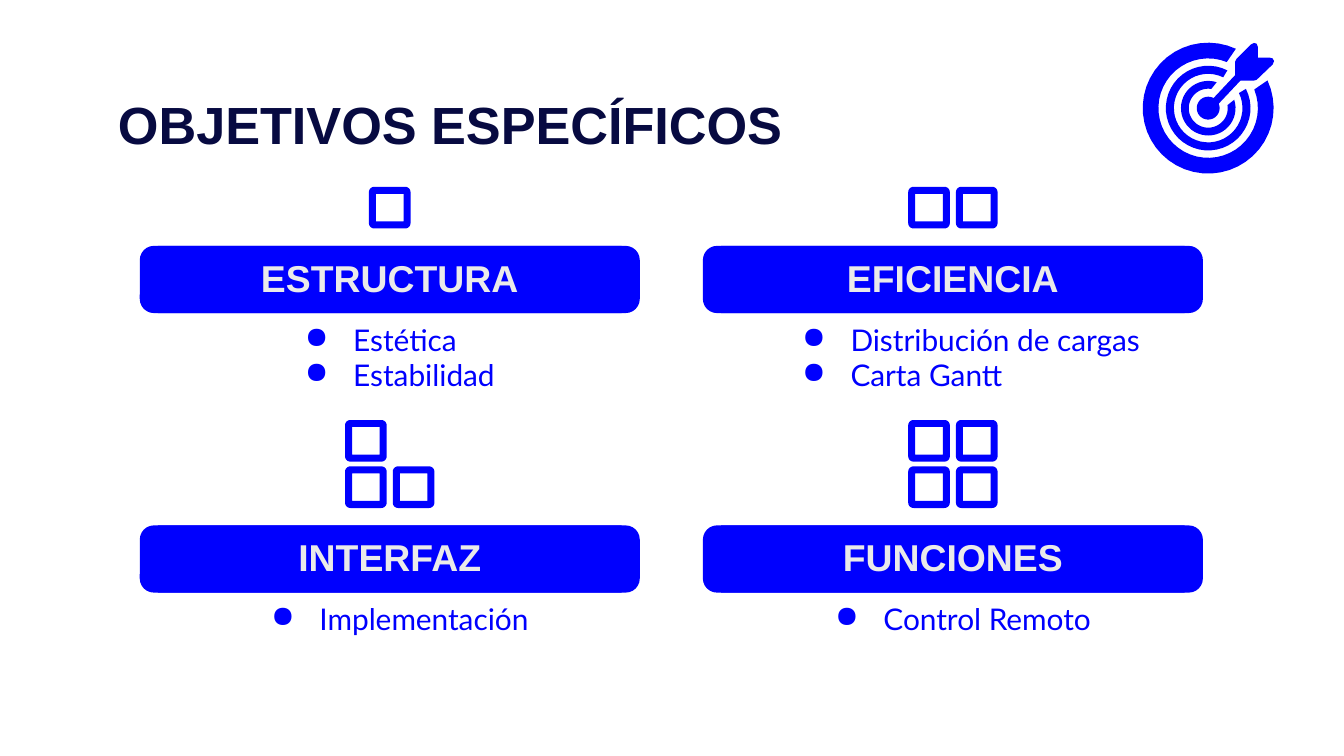
import math
from lxml import etree
from pptx import Presentation
from pptx import util as u
from pptx.dml.color import RGBColor
from pptx.enum import shapes, text
from pptx.oxml import ns

COLORS = {"blue": "0000FE", "navy": "070A41", "pale": "EAEAEA"}
RGB = {name: RGBColor.from_string(value) for name, value in COLORS.items()}

# Grid of 100 columns by 56.25 rows; every length below counts its cells
CELL = u.Inches(0.1)
prs = Presentation()
prs.slide_width = 100 * CELL
prs.slide_height = int(56.25 * CELL)
slide = prs.slides.add_slide(prs.slide_layouts[6])


def arc(x, y, radius, start, end, steps=40):
    """Points along a circle, with angles in degrees counted anticlockwise."""
    angles = [math.radians(start + (end - start) * i / steps) for i in range(steps + 1)]
    return [(x + radius * math.cos(a), y - radius * math.sin(a)) for a in angles]


def draw_outline(*contours):
    """One blue freeform; a second contour cuts a hole."""
    contours = [[(x * CELL, y * CELL) for x, y in points] for points in contours]
    builder = slide.shapes.build_freeform(*contours[0][0], scale=1.0)
    builder.add_line_segments(contours[0][1:], close=True)
    for points in contours[1:]:
        builder.move_to(*points[0])
        builder.add_line_segments(points[1:], close=True)
    outline = builder.convert_to_shape()
    outline.fill.solid()
    outline.fill.fore_color.rgb = RGB["blue"]


# Heading
heading = slide.shapes.add_textbox(*[int(n * CELL) for n in (7.8, 5.9, 84.4, 6.3)])
heading.text_frame.text = "OBJETIVOS ESPECÍFICOS"
heading_font = heading.text_frame.paragraphs[0].runs[0].font
heading_font.name, heading_font.size, heading_font.bold = "Arial", u.Pt(28), True
heading_font.color.rgb = RGB["navy"]

# Four objectives: name, column, row, points, counter squares (column, row above bar),
# then the inset and width of the list, its text indent and its alignment
LEFT, CENTER = text.PP_ALIGN.LEFT, text.PP_ALIGN.CENTER
BAR_WIDTH, BAR_HEIGHT = 37.2, 5
SQUARE, STEP_X, STEP_Y = 3.1, 3.55, 3.45
PAIR = [(0, 0), (1, 0)]
objectives = [
    ("ESTRUCTURA", 0, 0, ["Estética", "Estabilidad"], [(0.5, 0)], 4.9, 27.5, 10, LEFT),
    ("EFICIENCIA", 1, 0, ["Distribución de cargas", "Carta Gantt"], PAIR, 0, 37.2, 10, LEFT),
    ("INTERFAZ", 0, 1, ["Implementación"], PAIR + [(0, 1)], 4.9, 27.5, 5, CENTER),
    ("FUNCIONES", 1, 1, ["Control Remoto"], PAIR + [(0, 1), (1, 1)], 4.9, 27.5, 5, CENTER),
]
for name, column, row, points, squares, inset, list_width, indent, align in objectives:
    left, top = 10.4 + 41.9 * column, 18.3 + 20.8 * row

    # Rounded bar with its label on top
    bar = slide.shapes.add_shape(
        shapes.MSO_SHAPE.ROUNDED_RECTANGLE,
        *[int(n * CELL) for n in (left, top, BAR_WIDTH, BAR_HEIGHT)])
    bar.adjustments[0] = 0.21
    label = slide.shapes.add_shape(
        shapes.MSO_SHAPE.RECTANGLE,
        *[int(n * CELL) for n in (left + 1.35, top, BAR_WIDTH - 2.7, BAR_HEIGHT)])
    for part in (bar, label):
        part.fill.solid()
        part.fill.fore_color.rgb = RGB["blue"]
    label.text_frame.text = name
    label.text_frame.vertical_anchor = text.MSO_ANCHOR.BOTTOM
    label_line = label.text_frame.paragraphs[0]
    label_line.alignment = CENTER
    label_font = label_line.runs[0].font
    label_font.name, label_font.size, label_font.bold = "Arial", u.Pt(20), True
    label_font.color.rgb = RGB["pale"]

    # Bulleted list
    bullets = slide.shapes.add_textbox(
        *[int(n * CELL) for n in (left + inset, top + 4.6, list_width, 6.3)])
    bullets.text_frame.text = "\n".join(points)
    for point in bullets.text_frame.paragraphs:
        point.alignment = align
        props = point._p.get_or_add_pPr()
        props.set("marL", str(int(indent * CELL)))
        props.set("indent", str(int(-3.6 * CELL)))
        bullet_color = etree.SubElement(props, ns.qn("a:buClr"))
        etree.SubElement(bullet_color, ns.qn("a:srgbClr"), val=COLORS["blue"])
        etree.SubElement(props, ns.qn("a:buChar"), char="●")
        point_font = point.runs[0].font
        point_font.name, point_font.size = "Lato", u.Pt(16)
        point_font.color.rgb = RGB["blue"]

    # Counter squares: rounded outside, square hole inside
    first_x = left + (BAR_WIDTH - STEP_X - SQUARE) / 2
    for across, up in squares:
        x, y = first_x + across * STEP_X, top - 4.4 - up * STEP_Y
        near, far, radius = 0.4, SQUARE - 0.4, 0.4
        corners = [(far, near, 0), (near, near, 90), (near, far, 180), (far, far, 270)]
        rim = [p for dx, dy, start in corners
               for p in arc(x + dx, y + dy, radius, start, start + 90, 6)]
        a, b = 0.52, SQUARE - 0.52
        draw_outline(rim, [(x + a, y + a), (x + a, y + b), (x + b, y + b), (x + b, y + a)])

# Target: three open rings (outer radius and angles, inner radius and angles)
HUB_X, HUB_Y = 89.9, 8.05
rings = [
    (4.87, 25, 65, 3.7, 22, 68),
    (3.15, 27, 63, 2.55, 26, 64),
    (2.03, 18, 72, 1.45, 9, 81),
]
for outer, outer_low, outer_high, inner, inner_low, inner_high in rings:
    draw_outline(arc(HUB_X, HUB_Y, outer, outer_high, 360 + outer_low)
                 + arc(HUB_X, HUB_Y, inner, 360 + inner_low, inner_high))

# Dart with the bullseye at its tip
tail = [(90.7, 7.7), (92.3, 6), (93.3, 6), (93.5, 5.95), (94.7, 4.8), (94.8, 4.55),
        (94.7, 4.35), (94.5, 4.3), (93.6, 4.3), (93.6, 3.5), (93.5, 3.25), (93.3, 3.2),
        (93.1, 3.3), (92, 4.4), (91.9, 4.6), (91.9, 5.6), (90.3, 7.3)]
draw_outline(tail + arc(HUB_X, HUB_Y, 0.85, 65, 382))

# Shared finish
for part in slide.shapes:
    part.shadow.inherit = False
    part.line.fill.background()
    frame = part.text_frame
    frame.word_wrap = True
    frame.margin_left = frame.margin_right = CELL
    frame.margin_top = frame.margin_bottom = CELL

prs.save("out.pptx")
